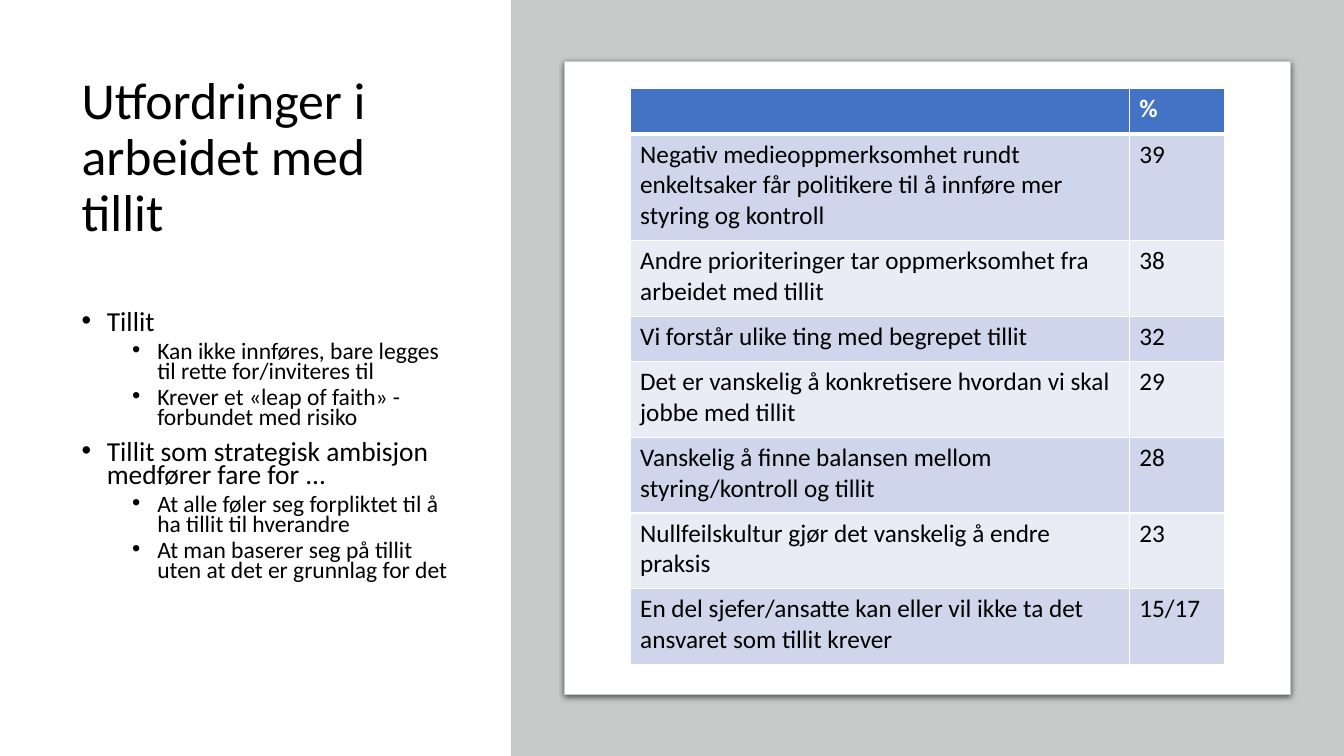
from dataclasses import dataclass

from lxml import etree
from pptx import Presentation
from pptx.dml.color import RGBColor
from pptx.enum.shapes import MSO_SHAPE
from pptx.enum.text import MSO_ANCHOR, MSO_AUTO_SIZE, PP_ALIGN
from pptx.oxml.ns import qn
from pptx.util import Inches, Pt

RECTANGLE, ROUNDED = MSO_SHAPE.RECTANGLE, MSO_SHAPE.ROUNDED_RECTANGLE
MIDDLE, TOP = MSO_ANCHOR.MIDDLE, MSO_ANCHOR.TOP
LEFT, NO_AUTOFIT = PP_ALIGN.LEFT, MSO_AUTO_SIZE.NONE


@dataclass(frozen=True)
class Theme:
    font: str = "Calibri"
    text: str = "000000"
    white: str = "FFFFFF"
    panel: str = "C8CACA"
    header: str = "4472C4"
    bands: tuple = ("CFD5EA", "E9EBF5")
    title_size: float = 37
    bullet_sizes: tuple = (19.6, 16.8)
    table_size: float = 18


THEME = Theme()


def add_span(para, text, size, color=THEME.text, bold=False):
    span = para.add_run()
    span.text = text
    formats = {"name": THEME.font, "size": Pt(size), "bold": bold}
    for name, value in formats.items():
        setattr(span.font, name, value)
    span.font.color.rgb = RGBColor.from_string(color)


def add_node(parent, tag, **attributes):
    values = {name: str(value) for name, value in attributes.items()}
    return etree.SubElement(parent, qn(tag), values)


deck = Presentation()
deck.slide_width, deck.slide_height = Inches(13.33), Inches(7.5)
page = deck.slides.add_slide(deck.slide_layouts[1])
title, body = page.shapes.title, page.placeholders[1]

# Title and body frames
for holder, top, height, anchor in ((title, 0.69, 1.77, MIDDLE), (body, 2.67, 4.14, TOP)):
    holder.left, holder.top = Inches(0.71), Inches(top)
    holder.width, holder.height = Inches(3.83), Inches(height)
    frame_formats = {"word_wrap": True, "auto_size": NO_AUTOFIT, "vertical_anchor": anchor}
    for name, value in frame_formats.items():
        setattr(holder.text_frame, name, value)

# Title
heading = title.text_frame.paragraphs[0]
heading.alignment, heading.line_spacing = LEFT, 0.9
add_span(heading, "Utfordringer i arbeidet med tillit", THEME.title_size)

# Bullet list
bullets = [
    (0, "Tillit"),
    (1, "Kan ikke innføres, bare legges til rette for/inviteres til"),
    (1, "Krever et «leap of faith» - forbundet med risiko"),
    (0, "Tillit som strategisk ambisjon medfører fare for ..."),
    (1, "At alle føler seg forpliktet til å ha tillit til hverandre"),
    (1, "At man baserer seg på tillit uten at det er grunnlag for det"),
]
body.text_frame.margin_top = Inches(0.44)
for index, (level, text) in enumerate(bullets):
    para = body.text_frame.add_paragraph() if index else body.text_frame.paragraphs[0]
    space_before = Pt((10, 5)[level]) if index else Pt(0)
    para_formats = {"level": level, "alignment": LEFT, "line_spacing": 0.7,
                    "space_before": space_before, "space_after": Pt(0)}
    for name, value in para_formats.items():
        setattr(para, name, value)
    properties = para._p.get_or_add_pPr()
    properties.set("marL", str(Inches((0.25, 0.75)[level])))
    properties.set("indent", str(Inches(-0.25)))
    add_node(properties, "a:buFont", typeface="Arial")
    add_node(properties, "a:buChar", char="•")
    add_span(para, text, THEME.bullet_sizes[level])

# Grey panel
panel = page.shapes.add_shape(RECTANGLE, Inches(5.07), 0, Inches(8.26), Inches(7.5))
panel.shadow.inherit = False
panel.fill.solid()
panel.fill.fore_color.rgb = RGBColor.from_string(THEME.panel)
panel.line.fill.background()

# White card with a soft shadow
card = page.shapes.add_shape(ROUNDED, Inches(5.6), Inches(0.61), Inches(7.2), Inches(6.28))
card.adjustments[0] = 0
card.fill.solid()
card.fill.fore_color.rgb = RGBColor.from_string(THEME.white)
card.line.color.rgb = RGBColor.from_string(THEME.panel)
card.line.width = Pt(0.75)
card.shadow.inherit = False
effects = card._element.spPr.find(qn("a:effectLst"))
shadow = add_node(effects, "a:outerShdw", blurRad=Pt(4.5), dist=Pt(1.5),
                  dir=90 * 60000, algn="t", rotWithShape=0)
add_node(add_node(shadow, "a:srgbClr", val=THEME.text), "a:alpha", val=63000)

# Table of challenges
rows = [
    ("", "%", 0.45),
    ("Negativ medieoppmerksomhet rundt enkeltsaker får politikere til å innføre mer "
     "styring og kontroll", "39", 1.06),
    ("Andre prioriteringer tar oppmerksomhet fra arbeidet med tillit", "38", 0.75),
    ("Vi forstår ulike ting med begrepet tillit", "32", 0.45),
    ("Det er vanskelig å konkretisere hvordan vi skal jobbe med tillit", "29", 0.75),
    ("Vanskelig å finne balansen mellom styring/kontroll og tillit", "28", 0.75),
    ("Nullfeilskultur gjør det vanskelig å endre praksis", "23", 0.75),
    ("En del sjefer/ansatte kan eller vil ikke ta det ansvaret som tillit krever",
     "15/17", 0.75),
]
table = page.shapes.add_table(len(rows), 2, Inches(6.25), Inches(0.88),
                              Inches(5.9), Inches(5.73)).table
for column, width in zip(table.columns, (4.95, 0.95)):
    column.width = Inches(width)

for row_index, (challenge, percent, height) in enumerate(rows):
    table.rows[row_index].height = Inches(height)
    is_header = row_index == 0
    fill = THEME.header if is_header else THEME.bands[(row_index - 1) % 2]
    color = THEME.white if is_header else THEME.text
    # The rule between header and first row is heavier
    edges = {"a:lnL": 1, "a:lnR": 1, "a:lnT": 3 if row_index == 1 else 1,
             "a:lnB": 3 if is_header else 1}
    for column_index, text in enumerate((challenge, percent)):
        cell = table.cell(row_index, column_index)
        if text:
            add_span(cell.text_frame.paragraphs[0], text, THEME.table_size, color, is_header)
        for edge, width in edges.items():
            border = add_node(cell._tc.get_or_add_tcPr(), edge, w=Pt(width))
            add_node(add_node(border, "a:solidFill"), "a:srgbClr", val=THEME.white)
        cell.fill.solid()
        cell.fill.fore_color.rgb = RGBColor.from_string(fill)

deck.save("out.pptx")
